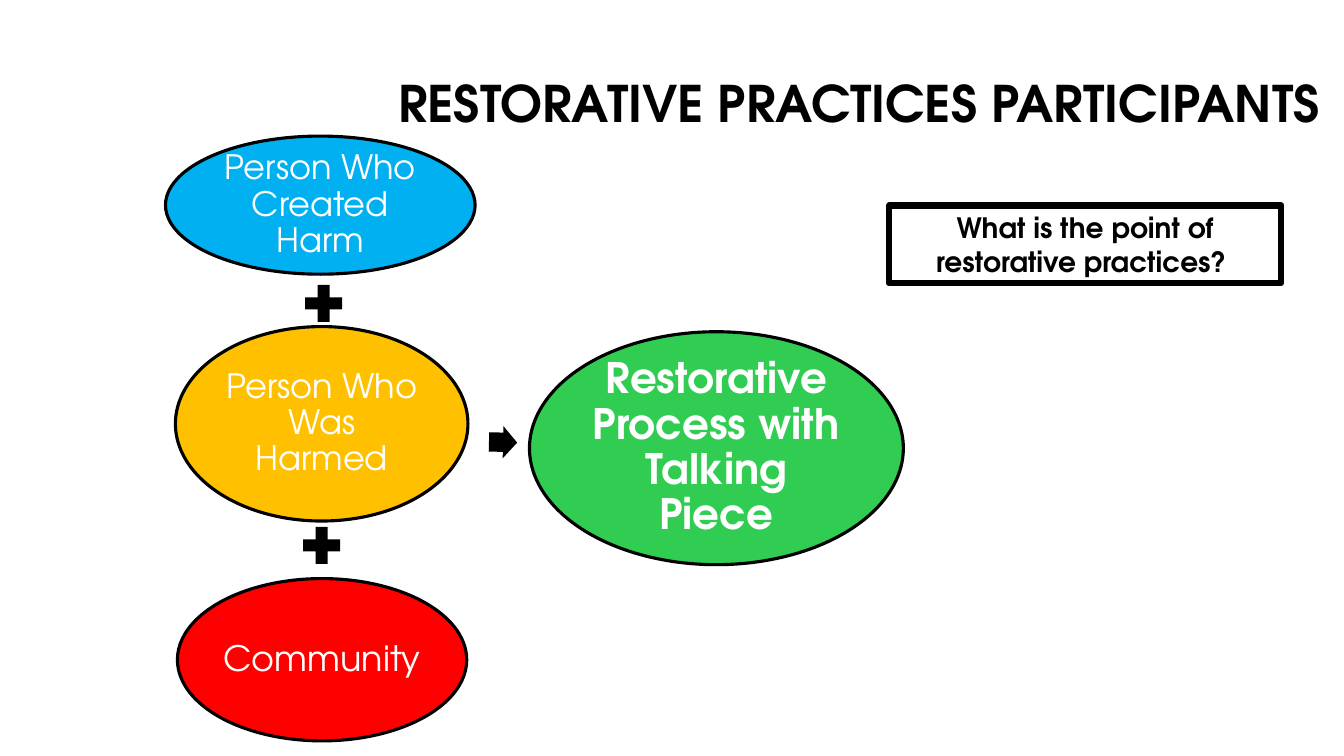
"""Build the slide on the participants in restorative practices."""
import pptx
import pptx.util
import pptx.dml.color
import pptx.enum.shapes
import pptx.enum.text

Cm, Pt = pptx.util.Cm, pptx.util.Pt
Kind = pptx.enum.shapes.MSO_SHAPE
Align = pptx.enum.text.PP_ALIGN
Anchor = pptx.enum.text.MSO_ANCHOR


def paint(color, code):
    color.rgb = pptx.dml.color.RGBColor.from_string(code)


def write(shape, text, size, code, bold, align=Align.CENTER, pitch=0.9):
    frame = shape.text_frame
    frame.word_wrap = True
    frame.vertical_anchor = Anchor.MIDDLE
    para = frame.paragraphs[0]
    para.text = text
    para.alignment = align
    para.line_spacing = pitch
    para.font.name = "TeX Gyre Adventor"
    para.font.size = Pt(size)
    para.font.bold = bold
    paint(para.font.color, code)


deck = pptx.Presentation()
deck.slide_width, deck.slide_height = Cm(33.86), Cm(19.05)
slide = deck.slides.add_slide(deck.slide_layouts[5])
shapes = slide.shapes

title = shapes.title
title.left, title.top, title.width, title.height = Cm(9.55), Cm(0.89), Cm(23.95), Cm(3.58)
write(title, "RESTORATIVE PRACTICES PARTICIPANTS", 36, "000000", True, Align.RIGHT)

ovals = [
    ("Person Who Created Harm", 4.17, 3.43, 7.8, 3.48, "00B0F0", 24, False),
    ("Person Who Was Harmed", 4.42, 8.23, 7.37, 4.9, "FFC000", 24, False),
    ("Community", 4.47, 14.58, 7.29, 4.09, "FF0000", 25, False),
    ("Restorative Process with Talking Piece", 13.34, 8.36, 9.42, 5.87, "31CD52", 30, True),
]
for text, left, top, width, height, code, size, bold in ovals:
    oval = shapes.add_shape(Kind.OVAL, Cm(left), Cm(top), Cm(width), Cm(height))
    oval.shadow.inherit = False
    oval.fill.solid()
    paint(oval.fill.fore_color, code)
    paint(oval.line.color, "000000")
    oval.line.width = Pt(2.25)
    frame = oval.text_frame
    frame.margin_left = frame.margin_right = Cm(0.08)
    frame.margin_top = frame.margin_bottom = Cm(0.08)
    write(oval, text, size, "FFFFFF", bold)

signs = [
    (Kind.MATH_PLUS, 7.52, 7.01, 1.27, 1.27, 0),
    (Kind.MATH_PLUS, 7.47, 13.11, 1.27, 1.27, 0),
    (Kind.RIGHT_ARROW, 12.32, 10.74, 0.71, 0.81, 1.4),
]
for kind, left, top, width, height, turn in signs:
    sign = shapes.add_shape(kind, Cm(left), Cm(top), Cm(width), Cm(height))
    sign.shadow.inherit = False
    sign.fill.solid()
    paint(sign.fill.fore_color, "000000")
    sign.line.fill.background()
    sign.rotation = turn
    if kind == Kind.RIGHT_ARROW:
        sign.adjustments[0] = 0.6

query = shapes.add_shape(Kind.RECTANGLE, Cm(22.4), Cm(5.18), Cm(9.88), Cm(1.96))
query.shadow.inherit = False
query.fill.background()
paint(query.line.color, "000000")
query.line.width = Pt(4.5)
write(query, "What is the point of restorative practices? ", 20, "000000", True, pitch=1.0)

deck.save("out.pptx")
